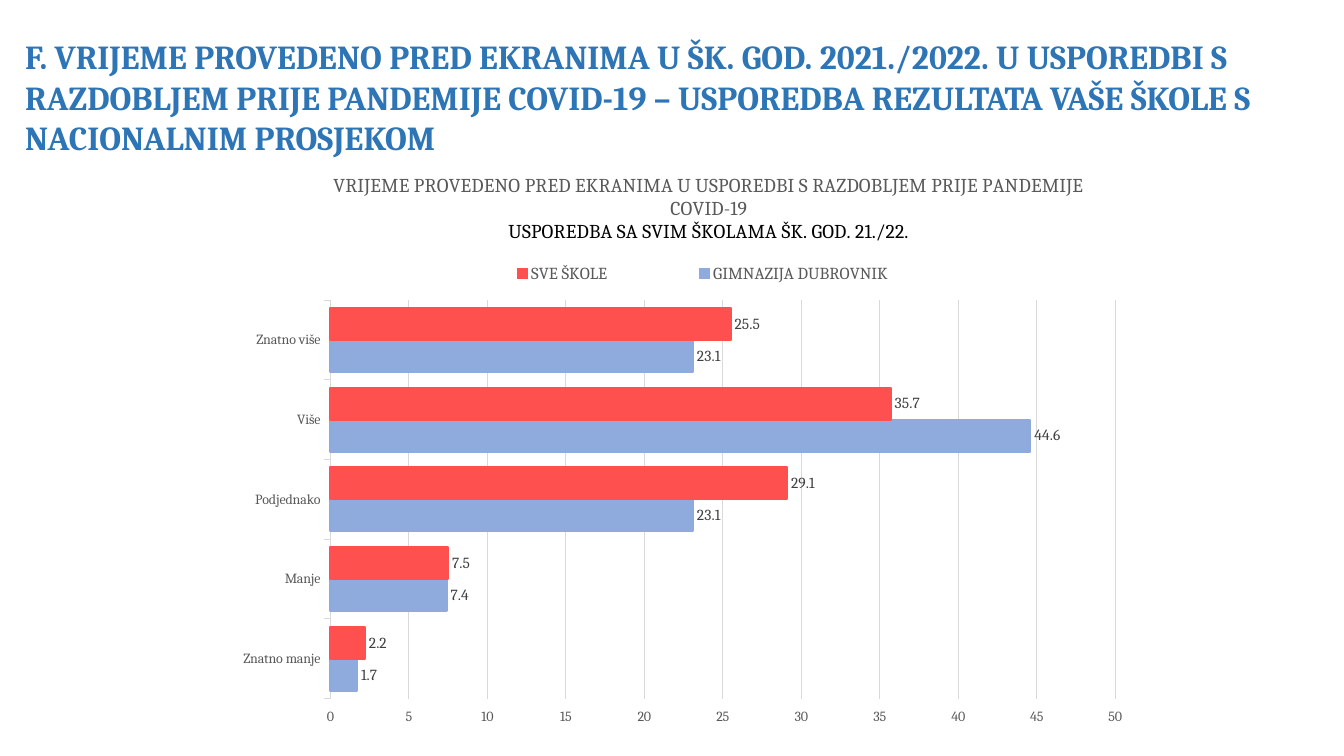
from lxml import etree
from pptx import Presentation
from pptx import util as u
from pptx.chart.data import CategoryChartData
from pptx.dml.color import RGBColor
from pptx.enum import chart as ch, text
from pptx.oxml import parse_xml
from pptx.oxml.ns import nsdecls

FONT = "Cambria"
COLORS = {"heading": "2E75B6", "black": "000000", "grey": "595959",
          "label": "404040", "grid": "D9D9D9",
          "school": "8FAADC", "all": "FF5050"}


def style(font, size, color, bold=False):
    font.name, font.size, font.bold = FONT, u.Pt(size), bold
    font.color.rgb = RGBColor.from_string(COLORS[color])


def place(element, x, y, w=None, h=None, inner=False):
    """Give a chart part a manual layout, in fractions of the chart."""
    for old in element.findall("{*}layout"):
        element.remove(old)
    values = [("xMode", "edge"), ("yMode", "edge"), ("x", x), ("y", y)]
    if inner:
        values.insert(0, ("layoutTarget", "inner"))
    if w:
        values += [("w", w), ("h", h)]
    items = "".join(f'<c:{tag} val="{val}"/>' for tag, val in values)
    layout = parse_xml(f'<c:layout {nsdecls("c")}><c:manualLayout>{items}'
                       '</c:manualLayout></c:layout>')
    # The layout follows the title text or legend position, and leads the plot area
    before = [i for i, e in enumerate(element)
              if etree.QName(e).localname in ("tx", "legendPos")]
    element.insert(before[-1] + 1 if before else 0, layout)


prs = Presentation()
prs.slide_width, prs.slide_height = u.Inches(13.33), u.Inches(7.5)
s = prs.slides.add_slide(prs.slide_layouts[5])

# Heading
sp = s.shapes.title
sp.left, sp.top = u.Inches(0.15), u.Inches(0.31)
sp.width, sp.height = u.Inches(12.48), u.Inches(1.31)
tf = sp.text_frame
tf.text = ("F. VRIJEME PROVEDENO PRED EKRANIMA U ŠK. GOD. 2021./2022. U USPOREDBI S "
           "RAZDOBLJEM PRIJE PANDEMIJE COVID-19 – USPOREDBA REZULTATA VAŠE ŠKOLE S "
           "NACIONALNIM PROSJEKOM")
tf.word_wrap = True
tf.auto_size = text.MSO_AUTO_SIZE.NONE
tf.vertical_anchor = text.MSO_ANCHOR.TOP
p = tf.paragraphs[0]
p.alignment = text.PP_ALIGN.LEFT
style(p.runs[0].font, 24, "heading", True)

# Chart data
data = CategoryChartData()
data.categories = ["Znatno manje", "Manje", "Podjednako", "Više", "Znatno više"]
data.add_series("GIMNAZIJA DUBROVNIK", [1.7, 7.4, 23.1, 44.6, 23.1])
data.add_series("SVE ŠKOLE", [2.2, 7.5, 29.1, 35.7, 25.5])
chart = s.shapes.add_chart(ch.XL_CHART_TYPE.BAR_CLUSTERED, u.Inches(1.68), u.Inches(1.62),
                           u.Inches(9.98), u.Inches(5.78), data).chart
style(chart.font, 10, "black")

# Chart title
chart.has_title = True
tf = chart.chart_title.text_frame
tf.text = ("VRIJEME PROVEDENO PRED EKRANIMA U USPOREDBI S RAZDOBLJEM PRIJE PANDEMIJE COVID-19\n"
           "USPOREDBA SA SVIM ŠKOLAMA ŠK. GOD. 21./22.")
for p, color in zip(tf.paragraphs, ("grey", "black")):
    p.alignment = text.PP_ALIGN.CENTER
    style(p.runs[0].font, 14, color)
chart.chart_title.include_in_layout = False
place(chart.chart_title._element, 0.16, 0.01)

# Legend
chart.has_legend = True
legend = chart.legend
legend.position = ch.XL_LEGEND_POSITION.TOP
legend.include_in_layout = False
style(legend.font, 12, "grey")
place(legend._element, 0.26, 0.16, 0.54, 0.06)

# Axes
for axis in (chart.category_axis, chart.value_axis):
    axis.major_tick_mark = ch.XL_TICK_MARK.OUTSIDE
    axis.minor_tick_mark = ch.XL_TICK_MARK.NONE
    style(axis.tick_labels.font, 10, "grey")
value_axis = chart.value_axis
value_axis.minimum_scale, value_axis.maximum_scale, value_axis.major_unit = 0, 50, 5
value_axis.has_major_gridlines = True
value_axis.format.line.fill.background()
for line in (chart.category_axis.format.line, value_axis.major_gridlines.format.line):
    line.width = u.Pt(0.75)
    line.color.rgb = RGBColor.from_string(COLORS["grid"])

# Bars and their values
plot = chart.plots[0]
plot.gap_width, plot.overlap = 49, 0
plot.vary_by_categories = False
place(chart._chartSpace.chart.plotArea, 0.16, 0.235, 0.78, 0.684, inner=True)
for series, color in zip(plot.series, ("school", "all")):
    rgb = RGBColor.from_string(COLORS[color])
    series.format.fill.solid()
    series.format.fill.fore_color.rgb = rgb
    series.format.line.color.rgb = rgb
    series.format.line.width = u.Pt(1.5)
    labels = series.data_labels
    labels.show_value = True
    labels.position = ch.XL_LABEL_POSITION.OUTSIDE_END
    style(labels.font, 11, "label")

prs.save("out.pptx")
